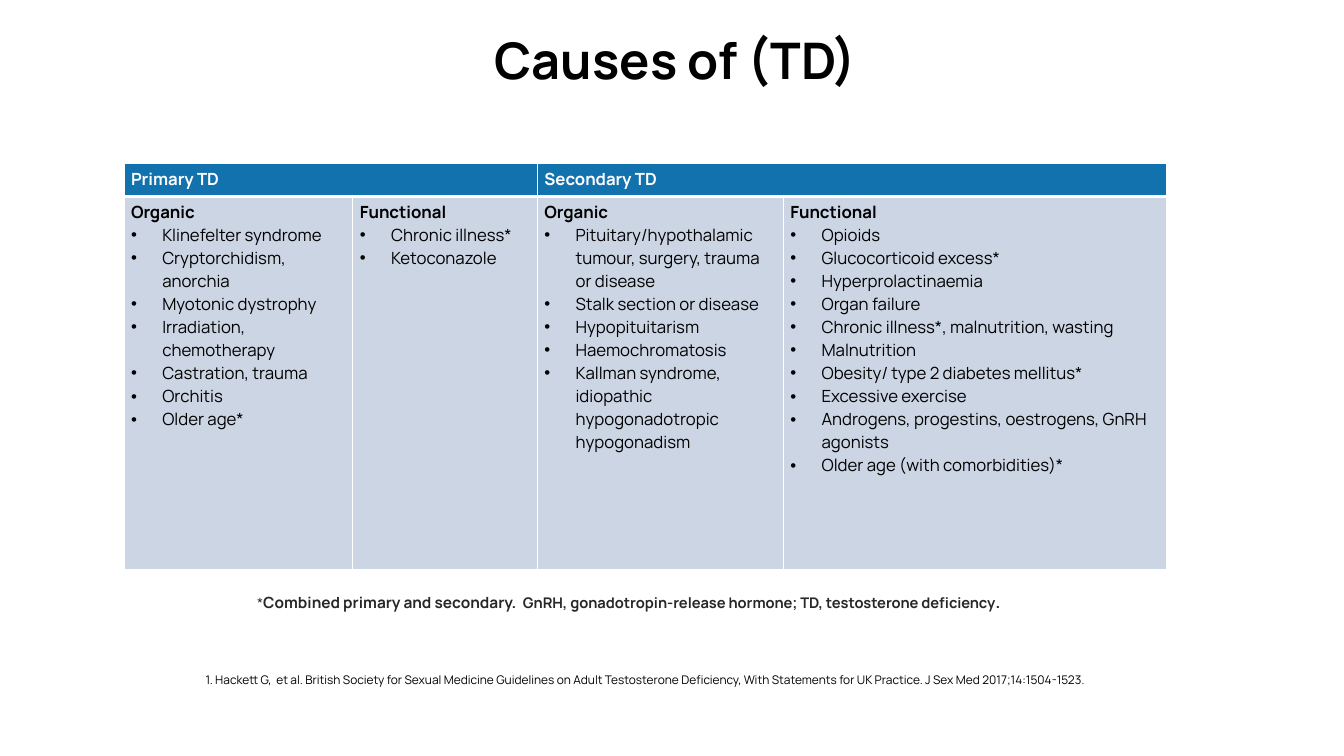
from lxml import etree
from pptx import Presentation
from pptx.dml.color import RGBColor
from pptx.enum.text import MSO_ANCHOR as Anchor, PP_ALIGN as Align
from pptx.oxml.ns import qn
from pptx.util import Inches, Pt

TITLE = "Causes of (TD)"
CAUSES = {
    "Primary TD": {
        "Organic": ["Klinefelter syndrome", "Cryptorchidism, anorchia", "Myotonic dystrophy",
                    "Irradiation, chemotherapy", "Castration, trauma", "Orchitis", "Older age*"],
        "Functional": ["Chronic illness*", "Ketoconazole"],
    },
    "Secondary TD": {
        "Organic": ["Pituitary/hypothalamic tumour, surgery, trauma or disease",
                    "Stalk section or disease", "Hypopituitarism", "Haemochromatosis",
                    "Kallman syndrome, idiopathic hypogonadotropic hypogonadism"],
        "Functional": ["Opioids", "Glucocorticoid excess*", "Hyperprolactinaemia", "Organ failure",
                       "Chronic illness*, malnutrition, wasting", "Malnutrition",
                       "Obesity/ type 2 diabetes mellitus*", "Excessive exercise",
                       "Androgens, progestins, oestrogens, GnRH agonists",
                       "Older age (with comorbidities)*"],
    },
}
# Each part: text, size, bold, font
FOOTNOTE = [
    ("*", 10, False, "Manrope"),
    ("Combined primary and secondary.  ", 11, True, "Manrope"),
    ("GnRH, gonadotropin-release hormone; TD, testosterone deficiency", 10.5, True, "Manrope"),
    (".", 10.5, True, "Roboto"),
]
CITATION = [
    ("1. Hackett G,  et al. British Society for Sexual Medicine Guidelines on Adult Testosterone "
     "Deficiency, With Statements for UK Practice. J Sex Med 2017;14:1504-1523", 8.5, False, "Manrope"),
    (". ", 8, False, "Manrope"),
]
COLUMN_WIDTHS = [2.27, 1.83, 2.44, 3.8]
ROW_HEIGHTS = [0.33, 3.7]
BLACK, WHITE, GREY, BLUE, PALE = "000000", "FFFFFF", "272727", "1272AE", "CCD5E3"


def rgb(color):
    return RGBColor.from_string(color)


def style(font, size, color, bold=False, name="Manrope"):
    font.size, font.bold, font.name = Pt(size), bold, name
    font.color.rgb = rgb(color)


def add_bullet(paragraph):
    props = paragraph._p.get_or_add_pPr()
    props.set("marL", str(Inches(0.31)))
    props.set("indent", str(-Inches(0.31)))
    etree.SubElement(props, qn("a:buFont")).set("typeface", "Arial")
    etree.SubElement(props, qn("a:buChar")).set("char", "•")


def format_cell(cell, fill, bottom=1):
    cell.margin_left = cell.margin_right = Inches(0.07)
    cell.margin_top = cell.margin_bottom = Inches(0.04)
    cell.fill.solid()
    cell.fill.fore_color.rgb = rgb(fill)
    props = cell._tc.get_or_add_tcPr()
    for place, (side, width) in enumerate([("L", 1), ("R", 1), ("T", 1), ("B", bottom)]):
        line = etree.Element(qn("a:ln" + side), w=str(Pt(width)))
        solid = etree.SubElement(line, qn("a:solidFill"))
        etree.SubElement(solid, qn("a:srgbClr")).set("val", WHITE)
        props.insert(place, line)


def add_note(parts, color, left, top, width, height):
    frame = slide.shapes.add_textbox(*map(Inches, (left, top, width, height))).text_frame
    frame.word_wrap = True
    for text, size, bold, name in parts:
        run = frame.paragraphs[0].add_run()
        run.text = text
        style(run.font, size, color, bold, name)
    return frame


prs = Presentation()
prs.slide_width, prs.slide_height = Inches(13.33), Inches(7.5)
slide = prs.slides.add_slide(prs.slide_layouts[5])

# Title
title = slide.shapes.title
title.left, title.top, title.width, title.height = map(Inches, (1.73, 0, 9.94, 1.29))
title.text_frame.text = TITLE
title.text_frame.vertical_anchor = Anchor.MIDDLE
heading = title.text_frame.paragraphs[0]
heading.alignment, heading.line_spacing = Align.CENTER, 0.8
style(heading.runs[0].font, 36, BLACK, True)

# Table of causes
table = slide.shapes.add_table(2, 4, *map(Inches, (1.23, 1.62, sum(COLUMN_WIDTHS),
                                                   sum(ROW_HEIGHTS)))).table
for column, width in zip(table.columns, COLUMN_WIDTHS):
    column.width = Inches(width)
for row, height in zip(table.rows, ROW_HEIGHTS):
    row.height = Inches(height)

for group, (kind, origins) in enumerate(CAUSES.items()):
    first = 2 * group
    for column in (first, first + 1):
        format_cell(table.cell(0, column), BLUE, bottom=3)
    header = table.cell(0, first)
    header.merge(table.cell(0, first + 1))
    header.text_frame.text = kind
    style(header.text_frame.paragraphs[0].runs[0].font, 12, WHITE, True)

    for column, (origin, causes) in enumerate(origins.items(), first):
        cell = table.cell(1, column)
        format_cell(cell, PALE)
        cell.text_frame.text = "\n".join([origin, *causes])
        for index, paragraph in enumerate(cell.text_frame.paragraphs):
            if index:
                add_bullet(paragraph)
            style(paragraph.runs[0].font, 12, BLACK, index == 0)

# Footnote and citation
footnote = add_note(FOOTNOTE, GREY, 2.55, 5.88, 9.03, 0.19)
footnote.margin_left = footnote.margin_right = footnote.margin_bottom = 0
footnote.margin_top = Inches(0.01)
footnote.vertical_anchor = Anchor.BOTTOM
citation = add_note(CITATION, BLACK, 1.48, 6.62, 9.86, 0.24)
citation.paragraphs[0].alignment = Align.CENTER

prs.save("out.pptx")
